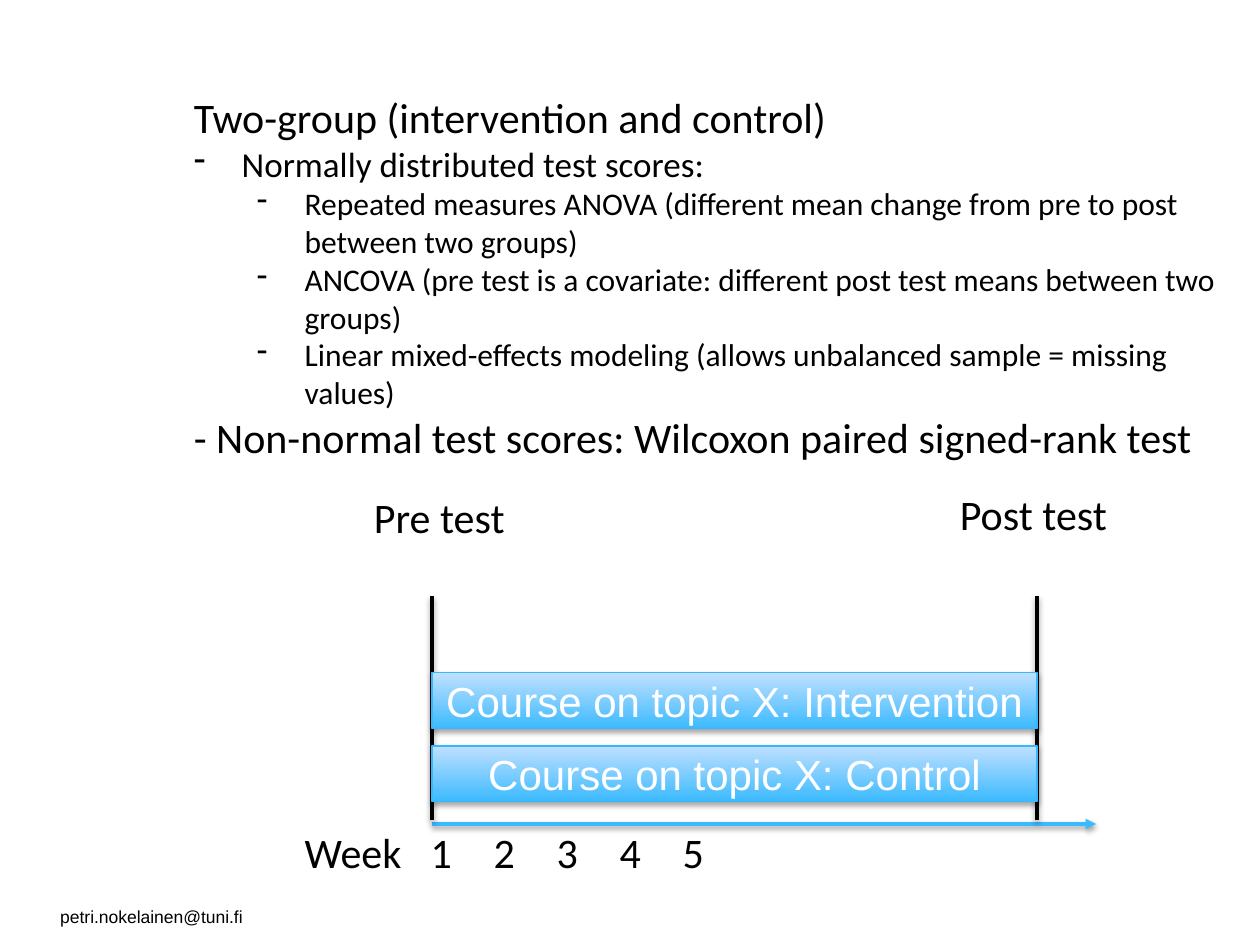
from lxml import etree
from pptx import Presentation
from pptx.dml.color import RGBColor
from pptx.enum import shapes, text
from pptx.oxml import ns
from pptx.util import Inches, Pt

BLACK = RGBColor(0x00, 0x00, 0x00)
WHITE = RGBColor(0xFF, 0xFF, 0xFF)
SKY = RGBColor(0x3C, 0xBA, 0xFF)
PALE_SKY = RGBColor(0xC0, 0xE0, 0xFF)
BAR_EDGE = RGBColor(0x36, 0xB7, 0xFE)

# (text, size, left margin in inches or None for no bullet)
METHODS = [
    ("Two-group (intervention and control)", 24, None),
    ("Normally distributed test scores:", 20, 0.38),
    ("Repeated measures ANOVA (different mean change from pre to post between two groups)", 18, 0.88),
    ("ANCOVA (pre test is a covariate: different post test means between two groups)", 18, 0.88),
    ("Linear mixed-effects modeling (allows unbalanced sample = missing values)", 18, 0.88),
    ("- Non-normal test scores: Wilcoxon paired signed-rank test", 24, None),
]
HANGING = 0.38
WEEKS = "\t".join(["Week", "1", "2", "3", "4", "5"])
TESTS = [("Post test", 7.52, 3.83), ("Pre test", 2.87, 3.85)]
COURSES = [("Course on topic X: Control", 5.92), ("Course on topic X: Intervention", 5.34)]
EMAIL = "petri.nokelainen@tuni.fi"

START, END = 3.43, 8.23
MARK_TOP, MARK_BOTTOM = 4.73, 6.51
AXIS_Y, AXIS_END = 6.54, 8.7
BAR_HEIGHT = 0.44


def add_element(parent, tag, **attributes):
    return etree.SubElement(parent, ns.qn(tag), attributes)


def add_shadow(effects, distance, opacity):
    shadow = add_element(effects, "a:outerShdw", blurRad=str(Pt(3.15)), dist=str(Pt(distance)),
                         dir="5400000", rotWithShape="0")
    color = add_element(shadow, "a:srgbClr", val="000000")
    add_element(color, "a:alpha", val=str(opacity * 1000))


def add_line(page, x1, y1, x2, y2, color, arrow=False):
    line = page.shapes.add_connector(shapes.MSO_CONNECTOR.STRAIGHT,
                                     Inches(x1), Inches(y1), Inches(x2), Inches(y2))
    line.line.color.rgb = color
    line.line.width = Pt(2)
    if arrow:
        add_element(line.get_or_add_ln(), "a:tailEnd", type="triangle")
    add_shadow(add_element(line._element.spPr, "a:effectLst"), 1.6, 38)


def add_text(page, paragraphs, left, top, width, height, wrap=True, font="Calibri"):
    box = page.shapes.add_textbox(Inches(left), Inches(top), Inches(width), Inches(height))
    frame = box.text_frame
    frame.word_wrap = wrap
    frame.auto_size = text.MSO_AUTO_SIZE.SHAPE_TO_FIT_TEXT
    for index, (words, size, margin) in enumerate(paragraphs):
        para = frame.add_paragraph() if index else frame.paragraphs[0]
        para.text = words
        if margin is not None:
            properties = para._p.get_or_add_pPr()
            properties.set("marL", str(Inches(margin)))
            properties.set("indent", str(-Inches(HANGING)))
            add_element(properties, "a:buChar", char="-")
            para.level = 1 if margin > HANGING else 0
        para.font.name = font
        para.font.size = Pt(size)
        para.font.color.rgb = BLACK


def add_course_bar(page, words, top):
    bar = page.shapes.add_shape(shapes.MSO_SHAPE.RECTANGLE, Inches(START), Inches(top),
                                Inches(END - START), Inches(BAR_HEIGHT))
    bar.fill.gradient()
    bar.fill.gradient_angle = 90
    for stop, color in zip(bar.fill.gradient_stops, (SKY, PALE_SKY)):
        stop.color.rgb = color
    bar.line.color.rgb = BAR_EDGE
    bar.line.width = Pt(0.75)
    bar.shadow.inherit = False
    add_shadow(bar._element.spPr.find(ns.qn("a:effectLst")), 1.8, 35)
    bar.text_frame.vertical_anchor = text.MSO_ANCHOR.MIDDLE
    para = bar.text_frame.paragraphs[0]
    para.text = words
    para.alignment = text.PP_ALIGN.CENTER
    para.font.name = "Arial"
    para.font.size = Pt(24)
    para.font.color.rgb = WHITE


def main():
    deck = Presentation()
    deck.slide_width, deck.slide_height = Inches(10), Inches(7.5)
    page = deck.slides.add_slide(deck.slide_layouts[6])

    add_text(page, [(EMAIL, 10, None)], 0.38, 7.14, 1.66, 0.27, wrap=False, font="Arial")
    add_line(page, START, AXIS_Y, AXIS_END, AXIS_Y, SKY, arrow=True)
    add_text(page, [(WEEKS, 24, None)], 2.32, 6.51, 5.42, 0.5, wrap=False)
    for x in (START, END):
        add_line(page, x, MARK_BOTTOM, x, MARK_TOP, BLACK)
    for words, left, top in TESTS:
        add_text(page, [(words, 24, None)], left, top, 1.97, 0.5)
    add_text(page, METHODS, 1.44, 0.68, 8.44, 3.06)
    for words, top in COURSES:
        add_course_bar(page, words, top)

    deck.save("out.pptx")


if __name__ == "__main__":
    main()
